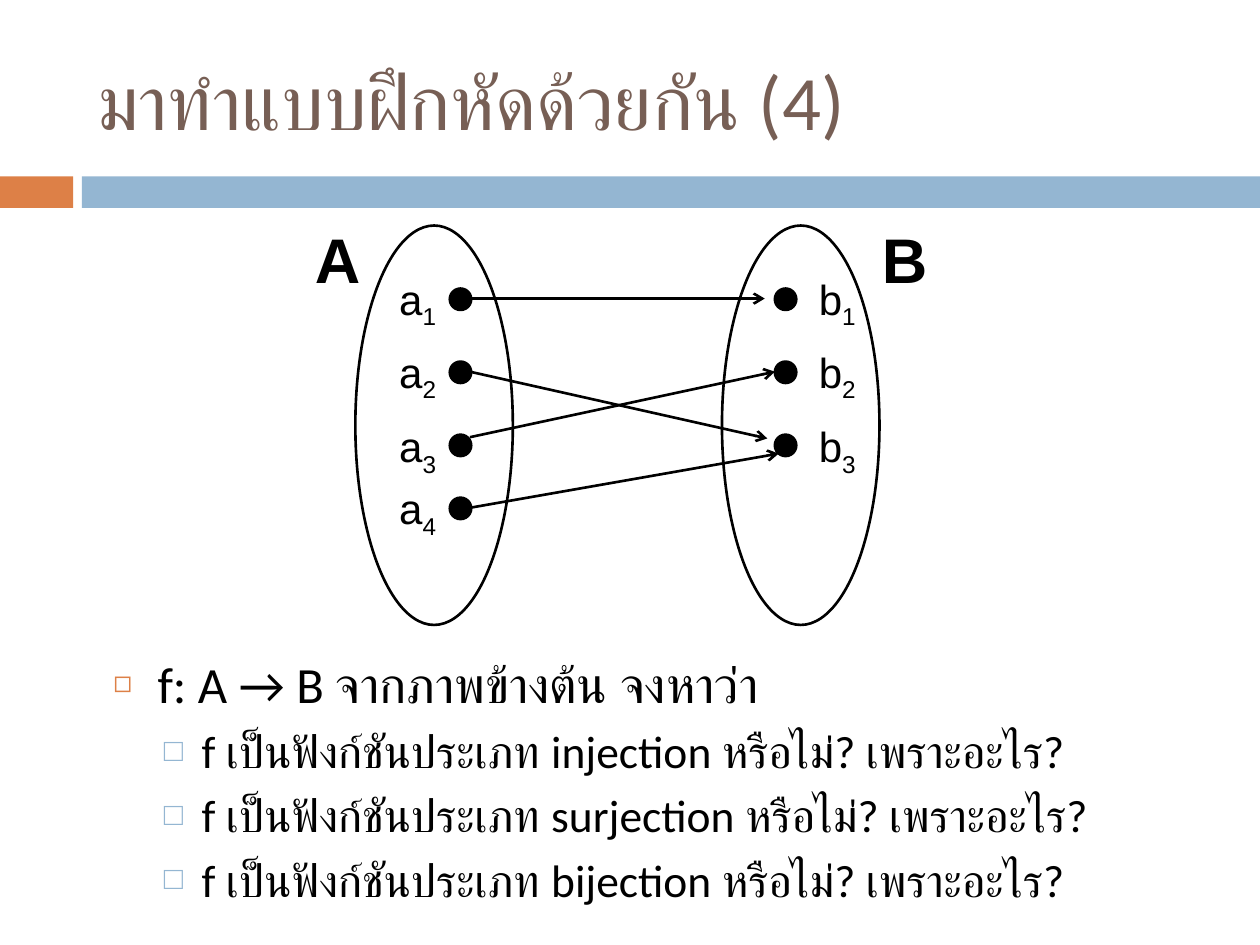
from lxml import etree
from pptx import Presentation
from pptx.dml.color import RGBColor
from pptx.enum.shapes import MSO_CONNECTOR, MSO_SHAPE
from pptx.enum.text import MSO_ANCHOR, MSO_AUTO_SIZE, PP_ALIGN
from pptx.oxml.ns import qn
from pptx.util import Inches, Pt

RECTANGLE, ELLIPSE = MSO_SHAPE.RECTANGLE, MSO_SHAPE.OVAL
STRAIGHT = MSO_CONNECTOR.STRAIGHT
LEFT, TOP, MIDDLE = PP_ALIGN.LEFT, MSO_ANCHOR.TOP, MSO_ANCHOR.MIDDLE
NO_FIT, GROW = MSO_AUTO_SIZE.NONE, MSO_AUTO_SIZE.SHAPE_TO_FIT_TEXT

BLACK, BROWN, ORANGE, BLUE = "000000", "775F55", "DD8047", "94B6D2"
DOT_SIZE = 0.17
DOT_TOPS = [2.29, 2.87, 3.45, 3.95]
LABEL_TOPS = [2.12, 2.7, 3.29, 3.78]
ARROWS = [
    (3.73, 2.37, 6.07, 2.37),
    (3.73, 2.95, 6.09, 3.48),
    (3.73, 4.03, 6.18, 3.6),
    (3.73, 3.47, 6.15, 2.95),
]
QUESTION = "f: A → B จากภาพข้างต้น จงหาว่า"
FUNCTION_TYPES = ["injection", "surjection", "bijection"]


def color(value):
    return RGBColor.from_string(value)


def place(shape, left, top, width, height):
    shape.left, shape.top = Inches(left), Inches(top)
    shape.width, shape.height = Inches(width), Inches(height)


def add_run(paragraph, text, size=24, font="Arial", fill=BLACK, bold=False, baseline=0):
    run = paragraph.add_run()
    run.text = text
    run.font.size = Pt(size)
    run.font.name = font
    run.font.bold = bold
    run.font.color.rgb = color(fill)
    if baseline:
        run.font._element.set("baseline", str(baseline * 1000))


def add_figure(slide, kind, left, top, width, height, fill=None, line=None):
    shape = slide.shapes.add_shape(
        kind, Inches(left), Inches(top), Inches(width), Inches(height))
    shape.shadow.inherit = False
    if fill:
        shape.fill.solid()
        shape.fill.fore_color.rgb = color(fill)
    else:
        shape.fill.background()
    if line:
        shape.line.color.rgb = color(line)
        shape.line.width = Pt(1.5)
    else:
        shape.line.fill.background()


def add_label(slide, text, left, top, width, height, subscript="", **text_format):
    box = slide.shapes.add_textbox(
        Inches(left), Inches(top), Inches(width), Inches(height))
    frame = box.text_frame
    frame.word_wrap = True
    frame.auto_size = GROW
    add_run(frame.paragraphs[0], text, **text_format)
    if subscript:
        add_run(frame.paragraphs[0], subscript, baseline=-25, **text_format)


def add_arrow(slide, *ends):
    connector = slide.shapes.add_connector(STRAIGHT, *map(Inches, ends))
    connector.line.color.rgb = color(BLACK)
    connector.line.width = Pt(1.5)
    line = connector.line._get_or_add_ln()
    etree.SubElement(line, qn("a:tailEnd"), type="arrow")
    etree.SubElement(connector._element.spPr, qn("a:effectLst"))


def add_members(slide, letter, count, dot_left, label_left):
    for number in range(count):
        add_figure(slide, ELLIPSE, dot_left, DOT_TOPS[number], DOT_SIZE, DOT_SIZE,
                   fill=BLACK, line=BLACK)
        add_label(slide, letter, label_left, LABEL_TOPS[number], 0.58, 0.51,
                  subscript=str(number + 1))


def add_set(slide, name, ellipse_left, name_left):
    add_figure(slide, ELLIPSE, ellipse_left, 1.79, 1.25, 3.17, line=BLACK)
    add_label(slide, name, name_left, 1.7, 0.67, 0.71, size=36, bold=True)


def set_bullet(paragraph, character, fill, percent, margin, indent):
    properties = paragraph._p.get_or_add_pPr()
    properties.set("marL", str(Inches(margin)))
    properties.set("indent", str(Inches(indent)))
    bullet_color = etree.SubElement(properties, qn("a:buClr"))
    etree.SubElement(bullet_color, qn("a:srgbClr"), val=fill)
    etree.SubElement(properties, qn("a:buSzPct"), val=str(percent * 1000))
    etree.SubElement(properties, qn("a:buChar"), char=character)


def fill_title(title):
    place(title, 0.67, 0.25, 8.92, 1.08)
    frame = title.text_frame
    frame.vertical_anchor = MIDDLE
    frame.auto_size = NO_FIT
    frame.paragraphs[0].alignment = LEFT
    add_run(frame.paragraphs[0], "มาทำแบบฝึกหัดด้วยกัน (4)",
            size=44, font="Calibri", fill=BROWN)


def fill_body(body):
    place(body, 0.8, 5.13, 9, 1.45)
    frame = body.text_frame
    frame.vertical_anchor = TOP
    frame.auto_size = NO_FIT
    paragraph = frame.paragraphs[0]
    paragraph.space_before = Pt(7)
    set_bullet(paragraph, "◻", ORANGE, 60, 0.35, -0.35)
    add_run(paragraph, QUESTION, size=29, font="Calibri")
    for function_type in FUNCTION_TYPES:
        paragraph = frame.add_paragraph()
        paragraph.level = 1
        paragraph.space_before = Pt(5.5)
        set_bullet(paragraph, "□", BLUE, 70, 0.7, -0.3)
        add_run(paragraph, f"f เป็นฟังก์ชันประเภท {function_type} หรือไม่? เพราะอะไร?",
                size=26, font="Calibri")


def main():
    presentation = Presentation()
    presentation.slide_width, presentation.slide_height = Inches(10), Inches(7.5)
    slide = presentation.slides.add_slide(presentation.slide_layouts[1])
    add_figure(slide, RECTANGLE, 0, 1.4, 0.58, 0.25, fill=ORANGE)
    add_figure(slide, RECTANGLE, 0.65, 1.4, 9.35, 0.25, fill=BLUE)
    fill_title(slide.shapes.title)
    add_members(slide, "a", 4, 3.57, 3.07)
    add_members(slide, "b", 3, 6.15, 6.4)
    for ends in ARROWS:
        add_arrow(slide, *ends)
    add_set(slide, "A", 2.82, 2.4)
    add_set(slide, "B", 5.73, 6.9)
    fill_body(slide.placeholders[1])
    presentation.save("out.pptx")


if __name__ == "__main__":
    main()
